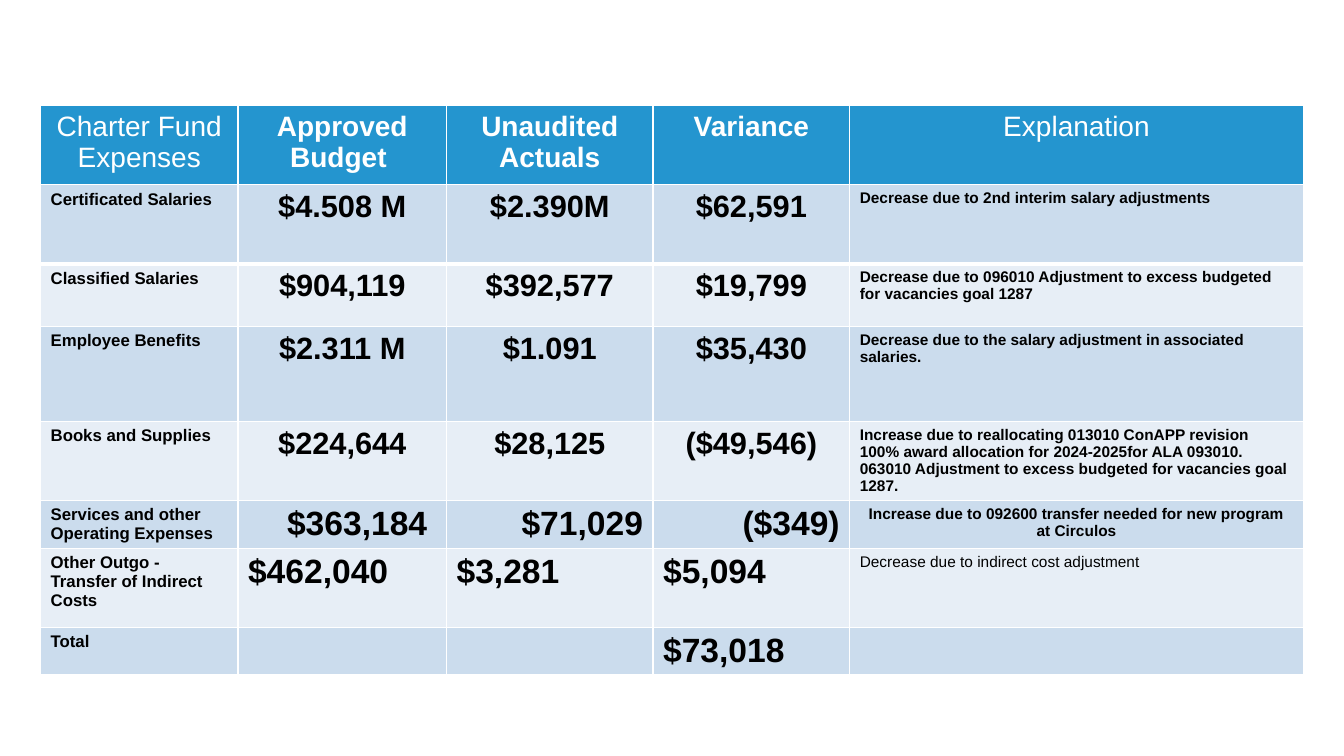
from dataclasses import dataclass

from lxml import etree
from pptx import Presentation
from pptx.dml.color import RGBColor
from pptx.enum import text
from pptx.oxml import ns
from pptx.util import Pt

LEFT, CENTER, RIGHT = text.PP_ALIGN.LEFT, text.PP_ALIGN.CENTER, text.PP_ALIGN.RIGHT


@dataclass(frozen=True)
class Theme:
    font: str = "Arial"
    header_fill: str = "2495CF"
    bands: tuple = ("CBDCED", "E7EEF6")
    white: str = "FFFFFF"
    black: str = "000000"
    header: int = 20
    label: int = 12
    amount: int = 22
    large_amount: int = 24
    note: int = 11


THEME = Theme()

COLUMN_WIDTHS = (141, 149, 147.5, 140.5, 324)
ROW_HEIGHTS = (56.5, 56.5, 44.5, 68, 56.5, 34, 56.5, 34)

HEADERS = ("Charter Fund\nExpenses", "Approved Budget ", "Unaudited\nActuals",
           "Variance", "Explanation")
REGULAR_HEADERS = ("Charter Fund\nExpenses", "Explanation")

# Label, budget, actuals, variance, explanation
EXPENSES = (
    ("Certificated Salaries", "$4.508 M", "$2.390M", "$62,591",
     "Decrease due to 2nd interim salary adjustments"),
    ("Classified Salaries", "$904,119", "$392,577", "$19,799",
     "Decrease due to 096010 Adjustment to excess budgeted for vacancies goal 1287"),
    ("Employee Benefits", "$2.311 M", "$1.091", "$35,430",
     "Decrease due to the salary adjustment in associated salaries."),
    ("Books and Supplies", "$224,644", "$28,125", "($49,546)",
     "Increase due to reallocating 013010 ConAPP revision 100% award allocation "
     "for 2024-2025for ALA 093010. 063010 Adjustment to excess budgeted for "
     "vacancies goal 1287."),
    ("Services and other Operating Expenses", "$363,184 ", "$71,029", "($349)",
     "Increase due to 092600 transfer needed for new program at Circulos"),
    ("Other Outgo - Transfer of Indirect Costs", "$462,040", "$3,281", "$5,094",
     "Decrease due to indirect cost adjustment"),
    ("Total", "", "", "$73,018", ""),
)

# Amount size, amount alignment, explanation alignment, explanation bold
MAIN_STYLE = (THEME.amount, CENTER, LEFT, True)
ROW_STYLES = {
    "Services and other Operating Expenses": (THEME.large_amount, RIGHT, CENTER, True),
    "Other Outgo - Transfer of Indirect Costs": (THEME.large_amount, LEFT, LEFT, False),
    "Total": (THEME.large_amount, LEFT, LEFT, True),
}


def set_borders(cell, top=1, bottom=1):
    """Add white borders; they must come before the fill in the cell XML."""
    tc_pr = cell._tc.get_or_add_tcPr()
    for side, width in (("L", 1), ("R", 1), ("T", top), ("B", bottom)):
        line = etree.SubElement(tc_pr, ns.qn(f"a:ln{side}"), w=str(Pt(width)))
        fill = etree.SubElement(line, ns.qn("a:solidFill"))
        etree.SubElement(fill, ns.qn("a:srgbClr"), val=THEME.white)


def set_fill(cell, color):
    cell.fill.solid()
    cell.fill.fore_color.rgb = RGBColor.from_string(color)


def set_text(cell, content, size, color, align, bold=True):
    if not content:
        return
    cell.text_frame.text = content
    for p in cell.text_frame.paragraphs:
        p.alignment = align
        for r in p.runs:
            r.font.name = THEME.font
            r.font.size = Pt(size)
            r.font.bold = bold
            r.font.color.rgb = RGBColor.from_string(color)


def fill_header(cells):
    for cell, title in zip(cells, HEADERS):
        set_borders(cell)
        set_fill(cell, THEME.header_fill)
        set_text(cell, title, THEME.header, THEME.white, CENTER,
                 title not in REGULAR_HEADERS)


def fill_expense(cells, index, values):
    size, align, note_align, note_bold = ROW_STYLES.get(values[0], MAIN_STYLE)
    formats = [(THEME.label, LEFT, True)]
    formats += [(size, align, True)] * 3
    formats += [(THEME.note, note_align, note_bold)]
    for cell, value, (size, align, bold) in zip(cells, values, formats):
        # A heavier rule separates the first two expenses
        set_borders(cell, top=3 if index == 1 else 1, bottom=3 if index == 0 else 1)
        set_fill(cell, THEME.bands[index % 2])
        set_text(cell, value, size, THEME.black, align, bold)


def add_expense_table(s):
    frame = s.shapes.add_table(len(ROW_HEIGHTS), len(COLUMN_WIDTHS), Pt(29), Pt(75.5),
                               Pt(sum(COLUMN_WIDTHS)), Pt(sum(ROW_HEIGHTS)))
    table = frame.table
    table.horz_banding = False
    for column, width in zip(table.columns, COLUMN_WIDTHS):
        column.width = Pt(width)
    for row, height in zip(table.rows, ROW_HEIGHTS):
        row.height = Pt(height)

    fill_header(table.rows[0].cells)
    for index, values in enumerate(EXPENSES):
        fill_expense(table.rows[index + 1].cells, index, values)


def main():
    prs = Presentation()
    prs.slide_width, prs.slide_height = Pt(960), Pt(540)
    s = prs.slides.add_slide(prs.slide_layouts[6])
    add_expense_table(s)
    prs.save("out.pptx")


if __name__ == "__main__":
    main()
